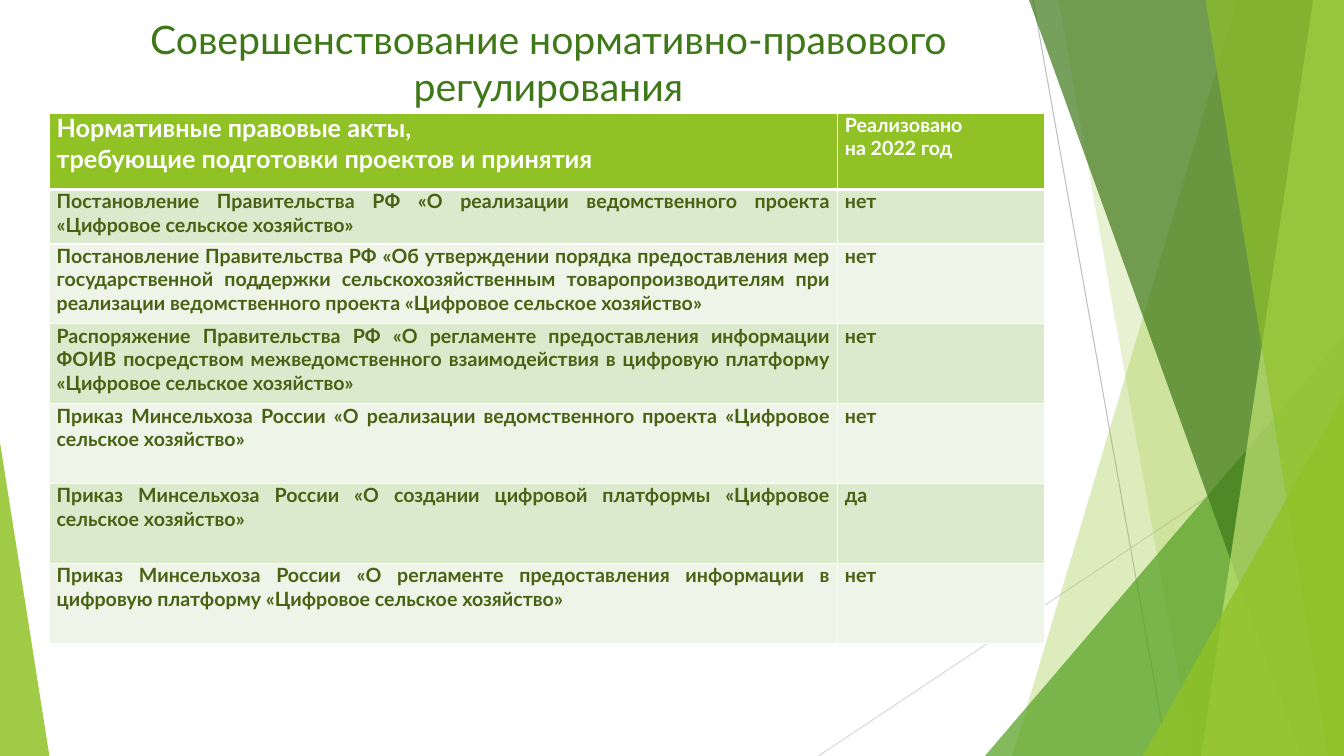
from dataclasses import dataclass

from lxml import etree
from pptx import Presentation
from pptx.dml.color import RGBColor
from pptx.enum.shapes import MSO_CONNECTOR, MSO_SHAPE
from pptx.enum.text import MSO_ANCHOR, PP_ALIGN
from pptx.oxml.ns import qn
from pptx.util import Pt

STRAIGHT = MSO_CONNECTOR.STRAIGHT
TRIANGLE = MSO_SHAPE.ISOSCELES_TRIANGLE
MIDDLE = MSO_ANCHOR.MIDDLE
CENTER, JUSTIFY = PP_ALIGN.CENTER, PP_ALIGN.JUSTIFY


@dataclass(frozen=True)
class Theme:
    font: str = "Lato"
    lime: str = "90C226"
    pale_lime: str = "C0E474"
    green: str = "54A021"
    dark: str = "3F7819"
    ink: str = "486113"
    white: str = "FFFFFF"
    gray: str = "BFBFBF"
    light_gray: str = "D9D9D9"
    bands: tuple = ("DBE9CD", "EEF4E8")
    title: int = 28
    heading: int = 18
    body: int = 14


def rgb(value):
    return RGBColor.from_string(value)


def write(tf, text, *, font, size, color, bold=False, align=JUSTIFY):
    for i, line in enumerate(text.split("\n")):
        p = tf.add_paragraph() if i else tf.paragraphs[0]
        p.alignment = align
        r = p.add_run()
        r.text = line
        r.font.name = font
        r.font.size = Pt(size)
        r.font.bold = bold
        r.font.color.rgb = rgb(color)


class Deck:
    def __init__(self, theme, width, height):
        self.theme = theme
        self.width, self.height = width, height
        self.prs = Presentation()
        self.prs.slide_width, self.prs.slide_height = Pt(width), Pt(height)
        self.s = self.prs.slides.add_slide(self.prs.slide_layouts[6])

    def line(self, x1, y1, x2, y2, color):
        sp = self.s.shapes.add_connector(STRAIGHT, Pt(x1), Pt(y1), Pt(x2), Pt(y2))
        sp.line.color.rgb = rgb(color)
        sp.line.width = Pt(0.75)
        etree.SubElement(sp.element.spPr, qn("a:effectLst"))

    def paint(self, sp, color, opacity):
        sp.shadow.inherit = False
        sp.fill.solid()
        sp.fill.fore_color.rgb = rgb(color)
        sp.line.fill.background()
        clr = sp.element.spPr.find(qn("a:solidFill")).find(qn("a:srgbClr"))
        etree.SubElement(clr, qn("a:alpha"), val=str(opacity * 1000))

    def facet(self, top, bottom, color, opacity):
        corners = [(self.width, 0), (self.width, self.height), (bottom, self.height)]
        fb = self.s.shapes.build_freeform(Pt(top), 0)
        fb.add_line_segments([(Pt(x), Pt(y)) for x, y in corners])
        self.paint(fb.convert_to_shape(), color, opacity)

    def triangle(self, x, y, w, apex, color, opacity):
        sp = self.s.shapes.add_shape(TRIANGLE, Pt(x), Pt(y), Pt(w), Pt(self.height - y))
        sp.adjustments[0] = apex
        self.paint(sp, color, opacity)

    def title(self, x, y, w, h, text):
        t = self.theme
        tf = self.s.shapes.add_textbox(Pt(x), Pt(y), Pt(w), Pt(h)).text_frame
        tf.word_wrap = True
        tf.vertical_anchor = MIDDLE
        write(tf, text, font=t.font, size=t.title, color=t.dark, align=CENTER)

    def border(self, cell, **widths):
        tc_pr = cell._tc.get_or_add_tcPr()
        for i, (side, width) in enumerate(widths.items()):
            ln = etree.Element(qn(f"a:ln{side}"), w=str(Pt(width)))
            fill = etree.SubElement(ln, qn("a:solidFill"))
            etree.SubElement(fill, qn("a:srgbClr"), val=self.theme.white)
            tc_pr.insert(i, ln)

    def table(self, x, y, cols, heights, rows):
        t = self.theme
        tbl = self.s.shapes.add_table(
            len(rows), len(cols), Pt(x), Pt(y), Pt(sum(cols)), Pt(sum(heights))
        ).table
        tbl.horz_banding = False
        for col, width in zip(tbl.columns, cols):
            col.width = Pt(width)
        for i, (height, texts) in enumerate(zip(heights, rows)):
            tbl.rows[i].height = Pt(height)
            head = i == 0
            for j, text in enumerate(texts):
                cell = tbl.cell(i, j)
                cell.margin_left = cell.margin_right = Pt(5.2)
                cell.margin_top = cell.margin_bottom = 0
                cell.fill.solid()
                cell.fill.fore_color.rgb = rgb(t.lime if head else t.bands[(i - 1) % 2])
                self.border(cell, L=1, R=1, T=3 if i == 1 else 1, B=3 if head else 1)
                write(
                    cell.text_frame, text, font=t.font, bold=True,
                    size=t.heading if head and j == 0 else t.body,
                    color=t.white if head else t.ink,
                )


ACTS = [
    ("Нормативные правовые акты,\nтребующие подготовки проектов и принятия",
     "Реализовано\nна 2022 год"),
    ("Постановление Правительства РФ «О реализации ведомственного проекта "
     "«Цифровое сельское хозяйство»", "нет"),
    ("Постановление Правительства РФ «Об утверждении порядка предоставления мер "
     "государственной поддержки сельскохозяйственным товаропроизводителям при "
     "реализации ведомственного проекта «Цифровое сельское хозяйство»", "нет"),
    ("Распоряжение Правительства РФ «О регламенте предоставления информации ФОИВ "
     "посредством межведомственного взаимодействия в цифровую платформу "
     "«Цифровое сельское хозяйство»", "нет"),
    ("Приказ Минсельхоза России «О реализации ведомственного проекта "
     "«Цифровое сельское хозяйство»", "нет"),
    ("Приказ Минсельхоза России «О создании цифровой платформы "
     "«Цифровое сельское хозяйство»", "да"),
    ("Приказ Минсельхоза России «О регламенте предоставления информации "
     "в цифровую платформу «Цифровое сельское хозяйство»", "нет"),
]


def main():
    t = Theme()
    deck = Deck(t, 960, 540)
    deck.line(738, 0, 834, 540, t.gray)
    deck.line(960, 290, 584.6, 540, t.light_gray)
    deck.facet(884, 723, t.lime, 30)
    deck.facet(756, 852, t.lime, 20)
    deck.triangle(703.5, 240, 256.5, 1, t.green, 72)
    deck.facet(735, 929.5, t.dark, 70)
    deck.facet(938, 858, t.pale_lime, 70)
    deck.facet(861, 949, t.lime, 65)
    deck.triangle(816.5, 283, 143.5, 1, t.lime, 80)
    deck.triangle(0, 316, 35.3, 0, t.lime, 85)
    deck.title(53.3, 7.2, 676.8, 74.9, "Совершенствование нормативно-правового регулирования")
    deck.table(35.3, 80.7, [563, 147.6], [54.7, 38.9] + [57.04] * 5, ACTS)
    deck.prs.save("out.pptx")


if __name__ == "__main__":
    main()
